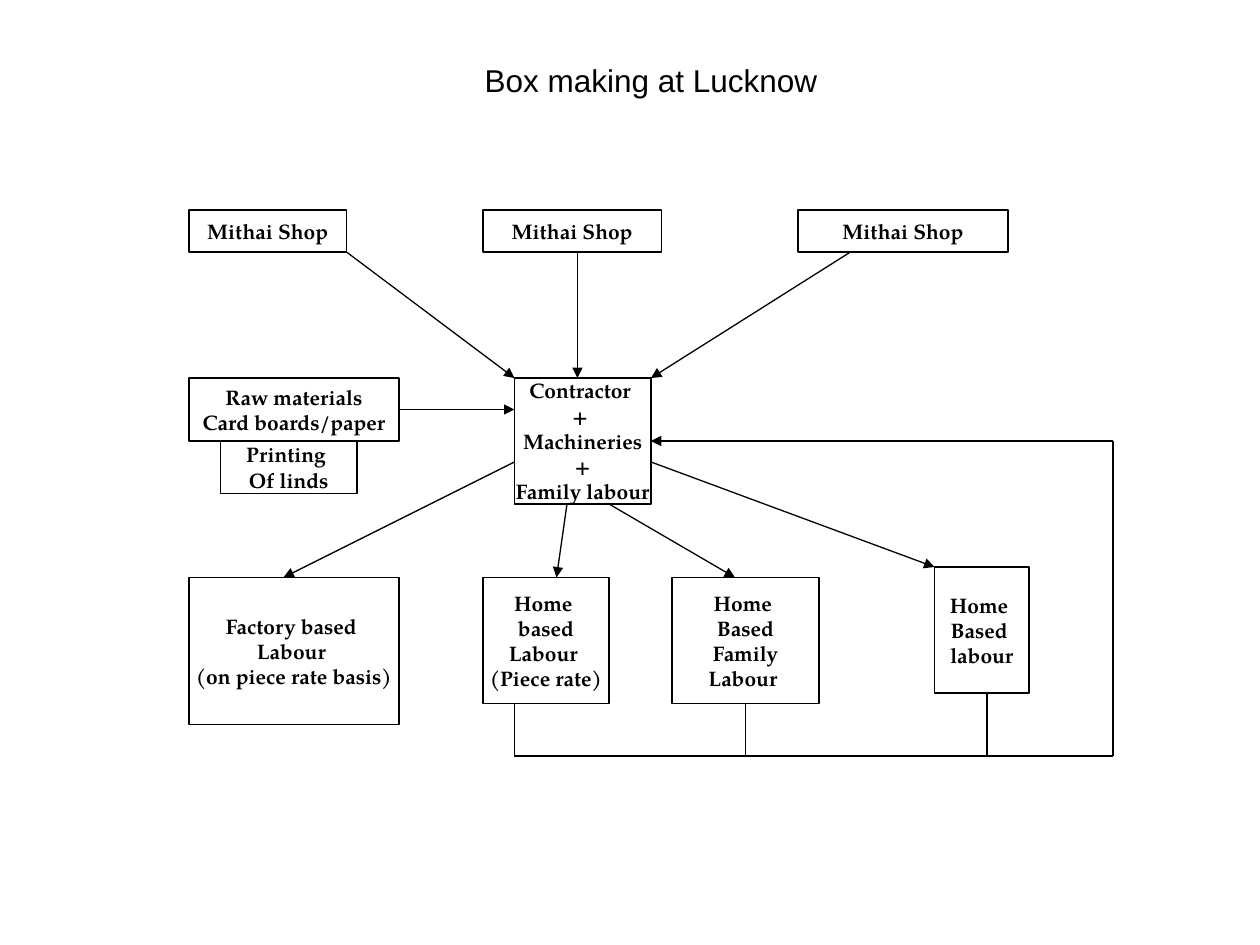
from dataclasses import dataclass

from lxml import etree
from pptx import Presentation
from pptx.dml.color import RGBColor
from pptx.enum import shapes, text
from pptx.oxml.ns import qn
from pptx.util import Pt

PX = 7620  # EMU in one px, 120 px to the inch


@dataclass(frozen=True)
class Theme:
    ink: RGBColor = RGBColor(0, 0, 0)
    fill: RGBColor = RGBColor(255, 255, 255)
    head: str = "Arial"
    body: str = "TeX Gyre Pagella"
    big: int = 18
    small: int = 12
    rule: float = 0.75


THEME = Theme()


def scale(*vals):
    return [v * PX for v in vals]


def write(frame, lines, face, size, bold):
    """Centre lines of text, one paragraph each."""
    frame.vertical_anchor = text.MSO_ANCHOR.MIDDLE
    frame.margin_left = frame.margin_right = 0
    frame.margin_top = frame.margin_bottom = 0
    frame.text = "\n".join(lines)
    for para in frame.paragraphs:
        para.alignment = text.PP_ALIGN.CENTER
        font = para.font
        font.name, font.size, font.bold = face, Pt(size), bold
        font.color.rgb = THEME.ink


def add_title(slide, words, place):
    title = slide.shapes.title
    title.left, title.top, title.width, title.height = scale(*place)
    write(title.text_frame, [words], THEME.head, THEME.big, False)
    title.text_frame.auto_size = text.MSO_AUTO_SIZE.NONE


def add_box(slide, place, *lines):
    box = slide.shapes.add_shape(shapes.MSO_SHAPE.RECTANGLE, *scale(*place))
    box.shadow.inherit = False
    box.fill.solid()
    box.fill.fore_color.rgb = THEME.fill
    box.line.color.rgb = THEME.ink
    box.line.width = Pt(THEME.rule)
    write(box.text_frame, lines, THEME.body, THEME.small, True)
    box.text_frame.word_wrap = False
    return box


def add_line(slide, ends, arrow=False):
    line = slide.shapes.add_connector(
        shapes.MSO_CONNECTOR.STRAIGHT, *scale(*ends))
    line.line.color.rgb = THEME.ink
    line.line.width = Pt(THEME.rule)
    if arrow:
        etree.SubElement(line.line._get_or_add_ln(), qn("a:tailEnd"),
                         type="triangle")
    etree.SubElement(line._element.spPr, qn("a:effectLst"))
    return line


def main():
    deck = Presentation()
    deck.slide_width, deck.slide_height = scale(1200, 900)
    slide = deck.slides.add_slide(deck.slide_layouts[0])
    sub = slide.placeholders[1]._element
    sub.getparent().remove(sub)
    add_title(slide, "Box making at Lucknow", (110, 60, 1020, 32))

    # Shops that place orders
    for left, width in ((180, 150), (460, 170), (760, 200)):
        add_box(slide, (left, 200, width, 40), "Mithai Shop")

    # Contractor and supplies
    hub = add_box(slide, (490, 360, 130, 120), "Contractor ", "+ ",
                  "Machineries", "+", "Family labour")
    stock = add_box(slide, (180, 360, 200, 60),
                    "Raw materials", "Card boards/paper")
    add_box(slide, (210, 420, 130, 50), "Printing ", "Of linds")

    # Labour groups
    add_box(slide, (180, 550, 200, 140), "Factory based ", "Labour ",
            "(on piece rate basis)")
    add_box(slide, (460, 550, 120, 120), "Home ", "based", "Labour ",
            "(Piece rate)")
    family = add_box(slide, (640, 550, 140, 120), "Home ", "Based",
                     "Family", "Labour ")
    add_box(slide, (890, 540, 90, 120), "Home ", "Based ", "labour")

    # Return path from home workers to the contractor
    base, edge = 720, 1060
    add_line(slide, (edge, 420, edge, base))
    add_line(slide, (490, base, edge, base))
    back = add_line(slide, (edge, 420, 620, 420), arrow=True)
    back.end_connect(hub, 3)
    add_line(slide, (490, 670, 490, base))
    drop = add_line(slide, (710, 670, 710, base))
    drop.begin_connect(family, 2)
    add_line(slide, (940, 660, 940, base))

    # Orders and materials in, work out
    supply = add_line(slide, (380, 390, 490, 390), arrow=True)
    supply.begin_connect(stock, 3)
    for ends in ((550, 240, 550, 360), (810, 240, 620, 360),
                 (330, 240, 490, 360), (540, 480, 530, 550),
                 (580, 480, 700, 550), (620, 440, 890, 540),
                 (490, 440, 270, 550)):
        add_line(slide, ends, arrow=True)

    deck.save("out.pptx")


if __name__ == "__main__":
    main()
